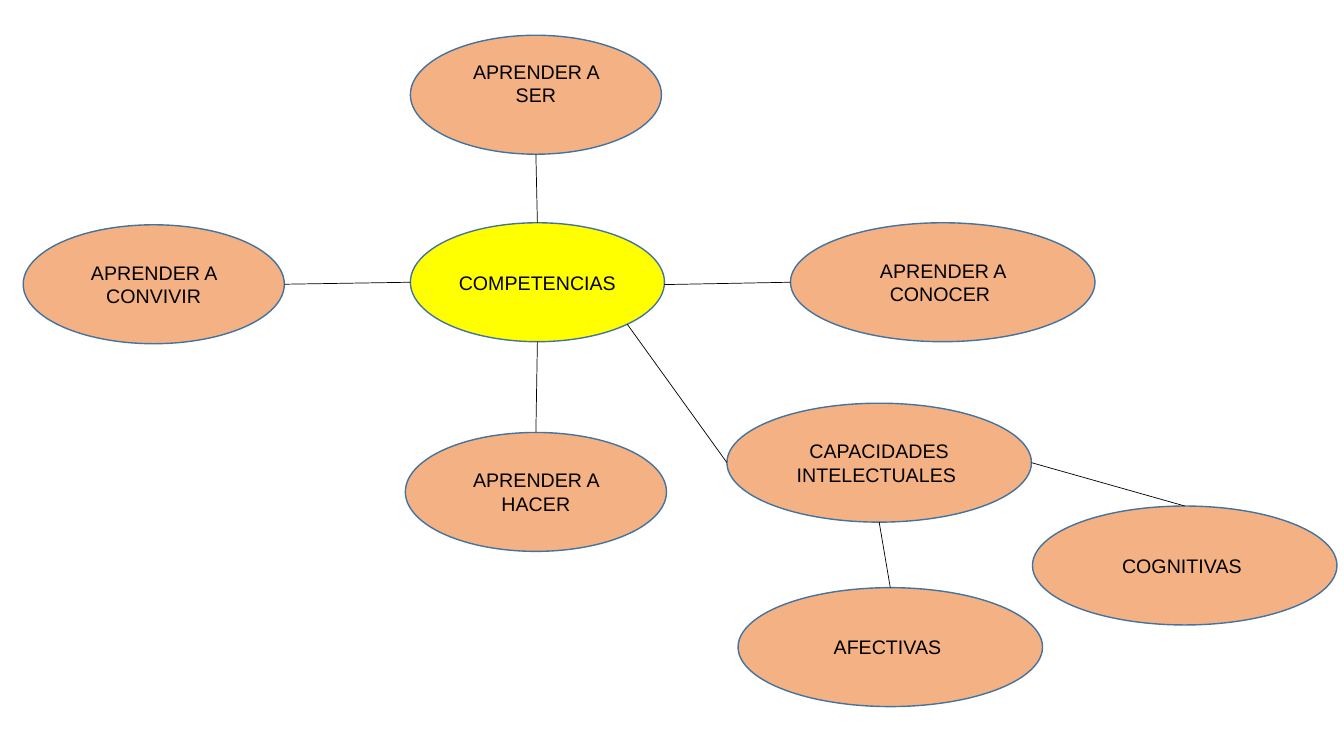
from dataclasses import dataclass

from lxml import etree
from pptx import Presentation
from pptx.dml.color import RGBColor
from pptx.enum.shapes import MSO_CONNECTOR, MSO_SHAPE
from pptx.enum.text import MSO_ANCHOR, PP_ALIGN
from pptx.oxml.ns import qn
from pptx.util import Inches, Pt

OVAL = MSO_SHAPE.OVAL
STRAIGHT = MSO_CONNECTOR.STRAIGHT
MIDDLE = MSO_ANCHOR.MIDDLE
CENTER = PP_ALIGN.CENTER
BLANK_LAYOUT = 6

# Points on an oval, as fractions of its width and height
TOP, BOTTOM, LEFT, RIGHT = (0.5, 0), (0.5, 1), (0, 0.5), (1, 0.5)
RIGHT_LOW, BOTTOM_RIGHT = (1, 0.52), (0.854, 0.854)

OVAL_HEIGHT = 1.18


@dataclass(frozen=True)
class Theme:
    font: str = "Arial"
    size: float = 14
    text: RGBColor = RGBColor(0x00, 0x00, 0x00)
    center: RGBColor = RGBColor(0xFF, 0xFF, 0x00)
    branch: RGBColor = RGBColor(0xF4, 0xB1, 0x83)
    outline: RGBColor = RGBColor(0x43, 0x73, 0x9E)
    outline_width: float = 1
    link: RGBColor = RGBColor(0x00, 0x00, 0x00)
    link_width: float = 0.5


THEME = Theme()

# name: (text, left, top, width)
CONCEPTS = {
    "ser": ("APRENDER A SER", 4.07, 0.35, 2.49),
    "hacer": ("APRENDER A HACER", 4.02, 4.29, 2.59),
    "competencias": ("COMPETENCIAS", 4.07, 2.21, 2.52),
    "conocer": ("APRENDER A CONOCER ", 7.84, 2.21, 3.02),
    "convivir": ("APRENDER A CONVIVIR", 0.23, 2.23, 2.59),
    "capacidades": ("CAPACIDADES INTELECTUALES ", 7.21, 4.0, 3.02),
    "afectivas": ("AFECTIVAS ", 7.32, 5.83, 3.02),
    "cognitivas": ("COGNITIVAS ", 10.24, 5.02, 3.02),
}

LINKS = [
    ("ser", BOTTOM, "competencias", TOP),
    ("competencias", LEFT, "convivir", RIGHT),
    ("competencias", RIGHT_LOW, "conocer", LEFT),
    ("competencias", BOTTOM, "hacer", TOP),
    ("competencias", BOTTOM_RIGHT, "capacidades", LEFT),
    ("capacidades", RIGHT, "cognitivas", TOP),
    ("capacidades", BOTTOM, "afectivas", TOP),
]


def set_text(sp, text, *, size=THEME.size, color=THEME.text, bottom=0.05):
    tf = sp.text_frame
    tf.word_wrap = True
    tf.vertical_anchor = MIDDLE
    tf.margin_bottom = Inches(bottom)
    p = tf.paragraphs[0]
    p.alignment = CENTER
    r = p.add_run()
    r.text = text
    r.font.name = THEME.font
    r.font.size = Pt(size)
    r.font.color.rgb = color


def add_concept(s, text, left, top, width, *, fill=THEME.branch, bottom=0.05):
    sp = s.shapes.add_shape(OVAL, Inches(left), Inches(top),
                            Inches(width), Inches(OVAL_HEIGHT))
    sp.shadow.inherit = False
    sp.fill.solid()
    sp.fill.fore_color.rgb = fill
    sp.line.color.rgb = THEME.outline
    sp.line.width = Pt(THEME.outline_width)
    set_text(sp, text, bottom=bottom)
    return sp


def point_on(sp, site):
    return (int(sp.left + sp.width * site[0]),
            int(sp.top + sp.height * site[1]))


def add_link(s, start, start_site, end, end_site):
    line = s.shapes.add_connector(STRAIGHT, *point_on(start, start_site),
                                  *point_on(end, end_site))
    line.line.color.rgb = THEME.link
    line.line.width = Pt(THEME.link_width)
    etree.SubElement(line._element.spPr, qn("a:effectLst"))


def main():
    prs = Presentation()
    prs.slide_width, prs.slide_height = Inches(13.33), Inches(7.5)
    s = prs.slides.add_slide(prs.slide_layouts[BLANK_LAYOUT])

    formats = {"competencias": {"fill": THEME.center},
               "ser": {"bottom": 0.28}}
    ovals = {name: add_concept(s, *concept, **formats.get(name, {}))
             for name, concept in CONCEPTS.items()}
    for start, start_site, end, end_site in LINKS:
        add_link(s, ovals[start], start_site, ovals[end], end_site)

    prs.save("out.pptx")


if __name__ == "__main__":
    main()
